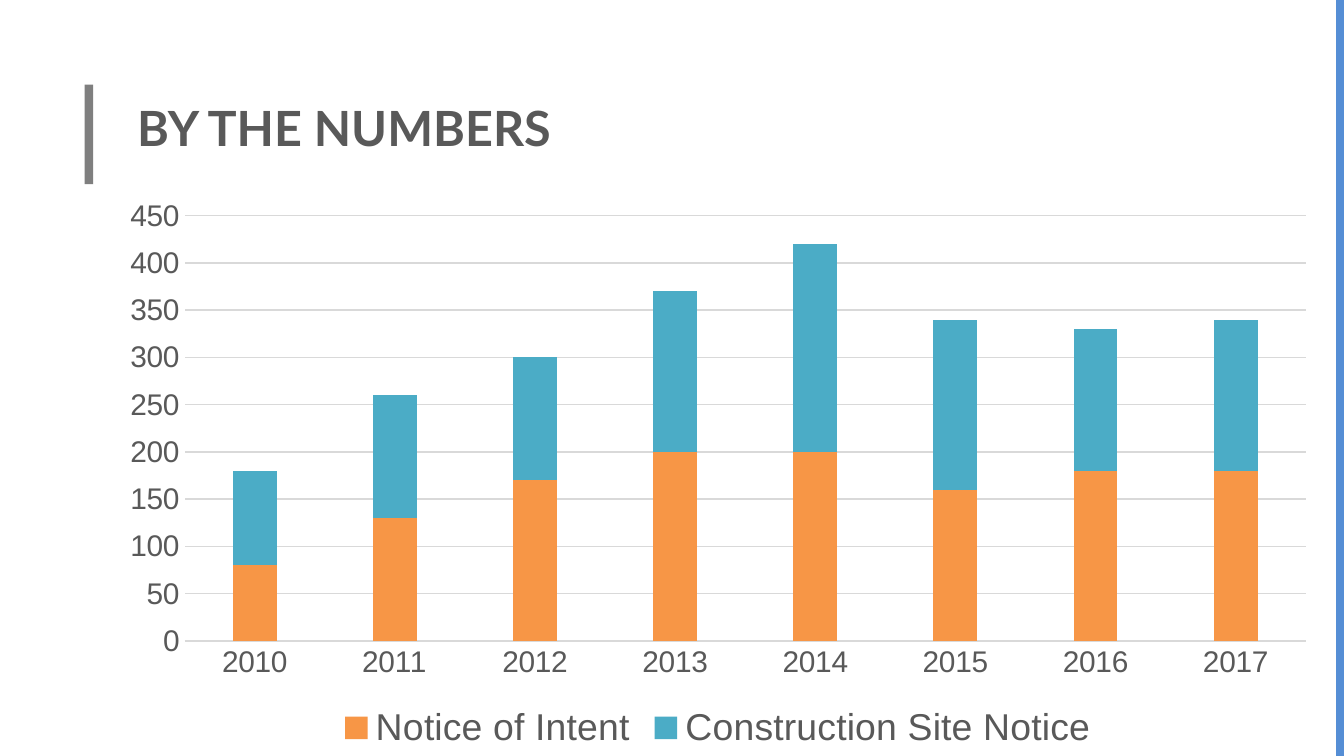
from dataclasses import dataclass

from pptx import Presentation
from pptx.chart.data import CategoryChartData
from pptx.dml.color import RGBColor
from pptx.enum import chart as ch, shapes, text
from pptx.util import Cm, Pt


@dataclass
class Bar:
    left: float
    top: float
    width: float
    height: float
    fill: str


@dataclass
class Series:
    name: str
    vals: list[int]
    fill: str


WIDTH, HEIGHT = 25.4, 14.29
GREY, RULE = "595959", "D9D9D9"
BARS = [
    Bar(1.6, 1.6, 0.16, 1.88, "7F7F7F"),
    Bar(25.25, 0, 0.15, HEIGHT, "558ED5"),
]
YEARS = [str(year) for year in range(2010, 2018)]
SERIES = [
    Series("Notice of Intent", [80, 130, 170, 200, 200, 160, 180, 180], "F79646"),
    Series("Construction Site Notice", [100, 130, 130, 170, 220, 180, 150, 160], "4BACC6"),
]


def paint(color, code: str) -> None:
    color.rgb = RGBColor.from_string(code)


def style(font, name: str, size: float, bold: bool = False) -> None:
    font.name = name
    font.size = Pt(size)
    font.bold = bold
    paint(font.color, GREY)


def rule(line) -> None:
    paint(line.color, RULE)
    line.width = Pt(0.75)


def draw_bar(slide, bar: Bar) -> None:
    shape = slide.shapes.add_shape(
        shapes.MSO_SHAPE.RECTANGLE,
        Cm(bar.left), Cm(bar.top), Cm(bar.width), Cm(bar.height),
    )
    shape.shadow.inherit = False
    shape.fill.solid()
    paint(shape.fill.fore_color, bar.fill)
    shape.line.fill.background()


def draw_title(slide, words: str) -> None:
    title = slide.shapes.title
    title.left, title.top = Cm(2.34), Cm(1.6)
    title.width, title.height = Cm(13.69), Cm(1.96)
    frame = title.text_frame
    frame.text = words
    frame.word_wrap = True
    frame.auto_size = text.MSO_AUTO_SIZE.NONE
    frame.vertical_anchor = text.MSO_ANCHOR.TOP
    frame.margin_left = frame.margin_right = Cm(0.25)
    frame.margin_top = frame.margin_bottom = Cm(0.25)
    para = frame.paragraphs[0]
    para.alignment = text.PP_ALIGN.LEFT
    style(para.font, "Lato", 26, True)


def draw_chart(slide) -> None:
    data = CategoryChartData()
    data.categories = YEARS
    for row in SERIES:
        data.add_series(row.name, row.vals)
    chart = slide.shapes.add_chart(
        ch.XL_CHART_TYPE.COLUMN_STACKED, Cm(2), Cm(3.56), Cm(23.14), Cm(10.74), data
    ).chart
    chart.has_title = False
    style(chart.font, "Arial", 16)

    plot = chart.plots[0]
    plot.gap_width = 219
    plot.overlap = 100
    plot.vary_by_categories = False
    for series, row in zip(plot.series, SERIES):
        series.format.fill.solid()
        paint(series.format.fill.fore_color, row.fill)

    years, count = chart.category_axis, chart.value_axis
    for axis in (years, count):
        axis.major_tick_mark = ch.XL_TICK_MARK.NONE
        axis.minor_tick_mark = ch.XL_TICK_MARK.NONE
        style(axis.tick_labels.font, "Arial", 16)
    rule(years.format.line)
    count.format.line.fill.background()
    count.minimum_scale, count.maximum_scale = 0, 450
    count.major_unit = 50
    count.has_major_gridlines = True
    rule(count.major_gridlines.format.line)

    chart.has_legend = True
    chart.legend.position = ch.XL_LEGEND_POSITION.BOTTOM
    chart.legend.include_in_layout = False
    style(chart.legend.font, "Arial", 20)


def main() -> None:
    deck = Presentation()
    deck.slide_width, deck.slide_height = Cm(WIDTH), Cm(HEIGHT)
    slide = deck.slides.add_slide(deck.slide_layouts[5])
    for bar in BARS:
        draw_bar(slide, bar)
    draw_title(slide, "BY THE NUMBERS")
    draw_chart(slide)
    deck.save("out.pptx")


if __name__ == "__main__":
    main()
